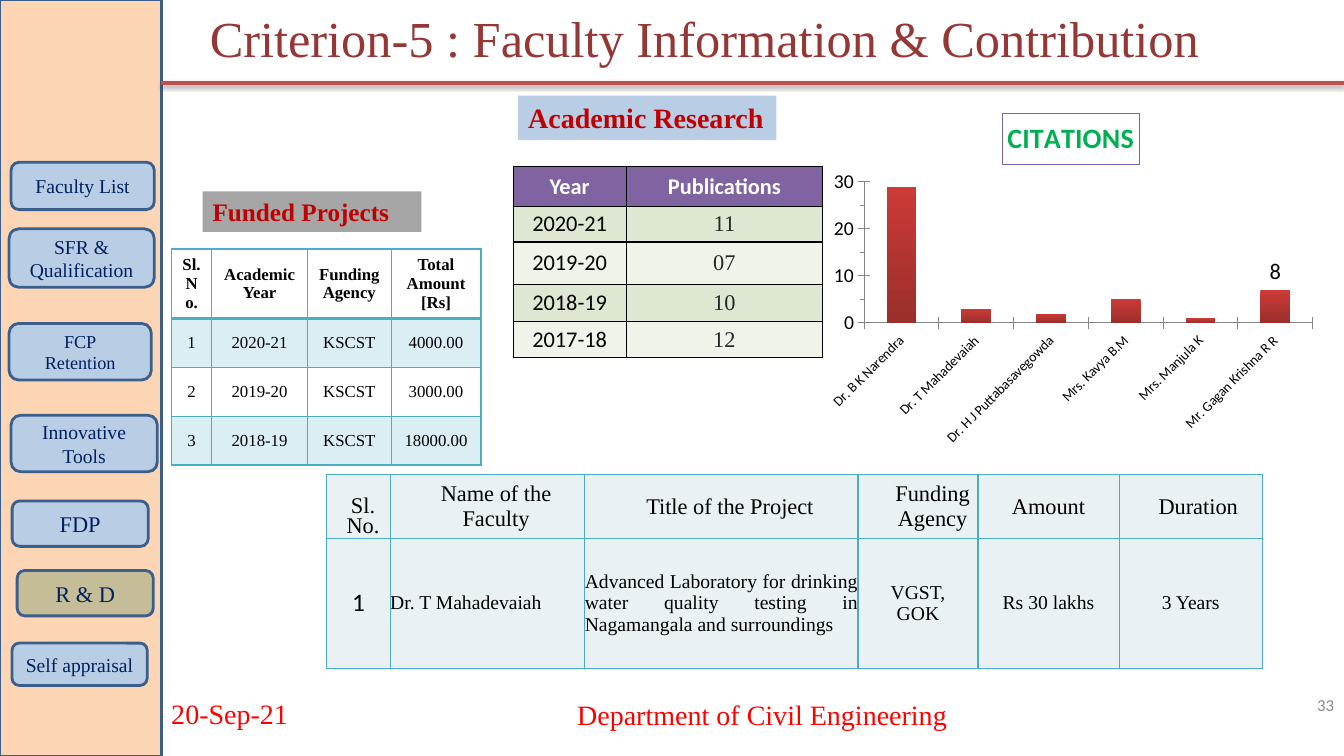
"""Build the faculty contribution slide with its tables, citation chart and side menu."""
from lxml import etree
from pptx import Presentation, oxml, util as u
from pptx.chart import data as chart_data
from pptx.dml.color import RGBColor
from pptx.enum import chart as ch, shapes, text
from pptx.oxml import ns

COLOURS = {name: RGBColor.from_string(value) for name, value in {
    "peach": "FCD5B5", "navy": "3A5F8C", "rule": "C0504D", "sky": "B9CDE5", "sand": "C4BD97",
    "ink": "002060", "maroon": "953735", "crimson": "C00000", "red": "FF0000", "grey": "A6A6A6",
    "page": "8C8C8C", "black": "000000", "white": "FFFFFF", "green": "00B050", "teal": "4BACC6",
    "ice": "DBEEF4", "mist": "E9F1F5", "purple": "8064A2", "sage": "DEE7D1", "pale": "EFF3EA",
    "charcoal": "262626", "axis": "868686", "bar top": "CC3A36", "bar base": "9A2F2C",
}.items()}
SERIF, SANS = "Times New Roman", "Calibri"
LEFT, CENTER, RIGHT, JUSTIFY = (text.PP_ALIGN.LEFT, text.PP_ALIGN.CENTER,
                                text.PP_ALIGN.RIGHT, text.PP_ALIGN.JUSTIFY)
MIDDLE = text.MSO_ANCHOR.MIDDLE
UNIT = u.Inches(0.1)


def grid(*steps):
    """Turn steps of a tenth of an inch into lengths."""
    return [u.Emu(round(UNIT * step)) for step in steps]


def write(frame, words, size, colour, align=CENTER, font=SERIF, bold=False):
    """Fill a text frame and format its runs."""
    frame.text = words
    frame.word_wrap = True
    for para in frame.paragraphs:
        para.alignment = align
        for span in para.runs:
            span.font.size, span.font.name, span.font.bold = u.Pt(size), font, bold
            span.font.color.rgb = COLOURS[colour]


deck = Presentation()
deck.slide_width, deck.slide_height = grid(133.3, 75)
page = deck.slides.add_slide(deck.slide_layouts[5])

sidebar = page.shapes.add_shape(shapes.MSO_SHAPE.RECTANGLE, *grid(0, 0, 16, 75))
sidebar.shadow.inherit = False
sidebar.fill.solid()
sidebar.fill.fore_color.rgb = COLOURS["peach"]
sidebar.line.color.rgb, sidebar.line.width = COLOURS["navy"], u.Pt(2)

rule = page.shapes.add_connector(shapes.MSO_CONNECTOR.STRAIGHT, *grid(16, 8.2, 133.3, 8.2))
rule.line.color.rgb, rule.line.width = COLOURS["rule"], u.Pt(3)
effects = etree.SubElement(rule._element.spPr, ns.qn("a:effectLst"))
shade = etree.SubElement(effects, ns.qn("a:outerShdw"), blurRad="40000", dist="20000", dir="5400000")
tint = etree.SubElement(shade, ns.qn("a:srgbClr"), val="000000")
etree.SubElement(tint, ns.qn("a:alpha"), val="38000")

title = page.shapes.title
title.left, title.top, title.width, title.height = grid(18.8, 0.2, 102.2, 7.1)
write(title.text_frame, "Criterion-5 : Faculty Information & Contribution", 36, "maroon")
title.text_frame.vertical_anchor = MIDDLE

grants = {
    "at": (32.4, 47.1), "cols": (6.3, 19.3, 27.1, 11.9, 14, 14.2), "rows": (6.3, 12.9),
    "edge": "teal", "insets": (0, 0), "size": 16, "fills": ("mist", "mist"),
    "cells": [["Sl. No.", "Name of the Faculty", "Title of the Project", "Funding Agency",
               "Amount", "Duration"],
              ["1", "Dr. T Mahadevaiah",
               "Advanced Laboratory for drinking water quality testing in Nagamangala and surroundings",
               "VGST,\nGOK", "Rs 30 lakhs", "3 Years"]]}
publications = {
    "at": (50.9, 16.5), "cols": (11.2, 19.5), "rows": (4, 3.5, 4.2, 3.7, 3.6),
    "edge": "black", "insets": (1, 0), "size": 16,
    "fills": ("purple", "sage", "pale", "sage", "pale"),
    "cells": [["Year", "Publications"], ["2020-21", "11"], ["2019-20", "07"],
              ["2018-19", "10"], ["2017-18", "12"]]}
funded = {
    "at": (17, 24.7), "cols": (4, 9.5, 8.3, 8.9), "rows": (6.9, 4.85, 4.85, 4.85),
    "edge": "teal", "insets": (1, 0.5), "size": 12, "fills": ("white", "ice", "white", "ice"),
    "cells": [["Sl. No.", "Academic Year", "Funding Agency", "Total Amount [Rs]"],
              ["1", "2020-21", "KSCST", "4000.00"], ["2", "2019-20", "KSCST", "3000.00"],
              ["3", "2018-19", "KSCST", "18000.00"]]}

for plan in (grants, publications, funded):
    area = grid(*plan["at"], sum(plan["cols"]), sum(plan["rows"]))
    table = page.shapes.add_table(len(plan["rows"]), len(plan["cols"]), *area).table
    plan["table"] = table
    for column, width in zip(table.columns, grid(*plan["cols"])):
        column.width = width
    for row, height in zip(table.rows, grid(*plan["rows"])):
        row.height = height
    side, top = grid(*plan["insets"])
    for r, line in enumerate(plan["cells"]):
        for c, words in enumerate(line):
            cell = table.cell(r, c)
            cell.margin_left = cell.margin_right = side
            cell.margin_top = cell.margin_bottom = top
            cell.vertical_anchor = MIDDLE
            for edge in ("lnL", "lnR", "lnT", "lnB"):
                thick = 2 if plan is funded and (r, edge) in ((0, "lnB"), (1, "lnT")) else 1
                border = etree.SubElement(cell._tc.get_or_add_tcPr(), ns.qn(f"a:{edge}"),
                                          w=str(u.Pt(thick)))
                paint = etree.SubElement(border, ns.qn("a:solidFill"))
                etree.SubElement(paint, ns.qn("a:srgbClr"), val=str(COLOURS[plan["edge"]]))
            cell.fill.solid()
            cell.fill.fore_color.rgb = COLOURS[plan["fills"][r]]
            write(cell.text_frame, words, plan["size"], "black", bold=plan is funded and r == 0)

for c, indent in enumerate((0.09, 0.17, 0.17, 0.29, 0, 0.15)):
    head, body = grants["table"].cell(0, c), grants["table"].cell(1, c)
    properties = head.text_frame.paragraphs[0]._p.get_or_add_pPr()
    properties.set("marL", str(u.Inches(indent)))
    properties.set("indent", "0")
    write(body.text_frame, grants["cells"][1][c], 14, "black", JUSTIFY if c in (1, 2) else CENTER)
number_head = grants["table"].cell(0, 0)
number_head.vertical_anchor = text.MSO_ANCHOR.BOTTOM
number_head.text_frame.paragraphs[0].line_spacing = u.Pt(14)
write(grants["table"].cell(1, 0).text_frame, "1", 18, "black", font=SANS)

for r, (year, count) in enumerate(publications["cells"]):
    year_cell, count_cell = publications["table"].cell(r, 0), publications["table"].cell(r, 1)
    write(year_cell.text_frame, year, 16, "black" if r else "white", font=SANS, bold=r == 0)
    write(count_cell.text_frame, count, 16, "charcoal" if r else "white",
          font=SERIF if r else SANS, bold=r == 0)

citations = chart_data.CategoryChartData()
citations.categories = ["Dr. B K Narendra", "Dr. T Mahadevaiah", "Dr. H J Puttabasavegowda",
                        "Mrs. Kavya B.M", "Mrs. Manjula K", "Mr. Gagan Krishna R R"]
citations.add_series("Series 1", (29, 3, 2, 5, 1, 7))
chart = page.shapes.add_chart(ch.XL_CHART_TYPE.COLUMN_CLUSTERED, *grid(81.2, 10, 50, 35), citations).chart
chart.font.name, chart.font.size, chart.font.color.rgb = SANS, u.Pt(10), COLOURS["black"]
chart.has_legend = False
write(chart.chart_title.text_frame, "CITATIONS", 20, "green", font=SANS, bold=True)
chart.chart_title.format.fill.solid()
chart.chart_title.format.fill.fore_color.rgb = COLOURS["white"]
chart.chart_title.format.line.color.rgb = COLOURS["purple"]

values, names = chart.value_axis, chart.category_axis
values.minimum_scale, values.maximum_scale = 0, 30
values.major_unit, values.minor_unit = 10, 5
values.has_major_gridlines = False
values.minor_tick_mark = ch.XL_TICK_MARK.OUTSIDE
values.tick_labels.font.size, names.tick_labels.font.size = u.Pt(14), u.Pt(10)
names._element.txPr.bodyPr.set("rot", "-2700000")
for axis in (values, names):
    axis.major_tick_mark = ch.XL_TICK_MARK.CROSS
    axis.format.line.color.rgb = COLOURS["axis"]

plot = chart.plots[0]
plot.gap_width, plot.vary_by_categories, plot.has_data_labels = 150, False, True
plot.data_labels.show_value = True
plot.data_labels.position = ch.XL_LABEL_POSITION.OUTSIDE_END
plot.data_labels.font.size = u.Pt(16)
bars = plot.series[0]
bars.format.fill.gradient()
bars.format.fill.gradient_angle = 270
for stop, shade_name in zip(bars.format.fill.gradient_stops, ("bar top", "bar base")):
    stop.color.rgb = COLOURS[shade_name]
last_label = bars.points[5].data_label
write(last_label.text_frame, "8", 16, "black", font=SANS)
last_label.position = ch.XL_LABEL_POSITION.OUTSIDE_END

plot_area = chart._chartSpace.chart.plotArea
for layout in plot_area.findall(ns.qn("c:layout")):
    plot_area.remove(layout)
sizes = "".join(f'<c:{key} val="{share}"/>' for key, share in
                (("xMode", "edge"), ("yMode", "edge"), ("x", 0.09), ("y", 0.23), ("w", 0.89), ("h", 0.4)))
plot_area.insert(0, oxml.parse_xml(
    f'<c:layout {ns.nsdecls("c")}><c:manualLayout><c:layoutTarget val="inner"/>{sizes}'
    '</c:manualLayout></c:layout>'))

for words, at, fill, size, wrap in (("Academic Research", (51.4, 9.5, 25.6, 4.4), "sky", 20, False),
                                    ("Funded Projects", (20.1, 19, 21.7, 4), "grey", 18, True)):
    label = page.shapes.add_textbox(*grid(*at))
    label.fill.solid()
    label.fill.fore_color.rgb = COLOURS[fill]
    write(label.text_frame, words, size, "crimson", LEFT, bold=True)
    label.text_frame.word_wrap = wrap

for words, at, size in (("Faculty List", (1.1, 16.1, 14.2, 4.7), 14),
                        ("SFR & Qualification", (0.9, 22.7, 14.4, 5.8), 14),
                        ("FCP\nRetention", (0.9, 32.1, 14.1, 5.6), 13),
                        ("Innovative Tools", (1.1, 41.2, 14.5, 5.6), 14),
                        ("FDP", (1.2, 49.7, 13.5, 4.5), 16),
                        ("R & D", (1.7, 56.6, 13.5, 4.5), 16),
                        ("Self appraisal", (1.2, 63.8, 13.4, 4.2), 14)):
    button = page.shapes.add_shape(shapes.MSO_SHAPE.FLOWCHART_ALTERNATE_PROCESS, *grid(*at))
    button.shadow.inherit = False
    button.fill.solid()
    button.fill.fore_color.rgb = COLOURS["sand" if words == "R & D" else "sky"]
    button.line.color.rgb, button.line.width = COLOURS["navy"], u.Pt(2)
    write(button.text_frame, words, size, "ink")
    button.text_frame.vertical_anchor = MIDDLE

for words, at, size, colour, align, font in (
        ("20-Sep-21", (16, 69, 31.1, 3.5), 20, "red", LEFT, SERIF),
        ("33", (124.4, 67.9, 8.9, 4), 12, "page", RIGHT, SANS),
        ("Department of Civil Engineering", (47.8, 68.9, 55.6, 4), 20, "red", CENTER, SERIF)):
    footer = page.shapes.add_textbox(*grid(*at))
    write(footer.text_frame, words, size, colour, align, font)
    footer.text_frame.vertical_anchor = MIDDLE

deck.save("out.pptx")
